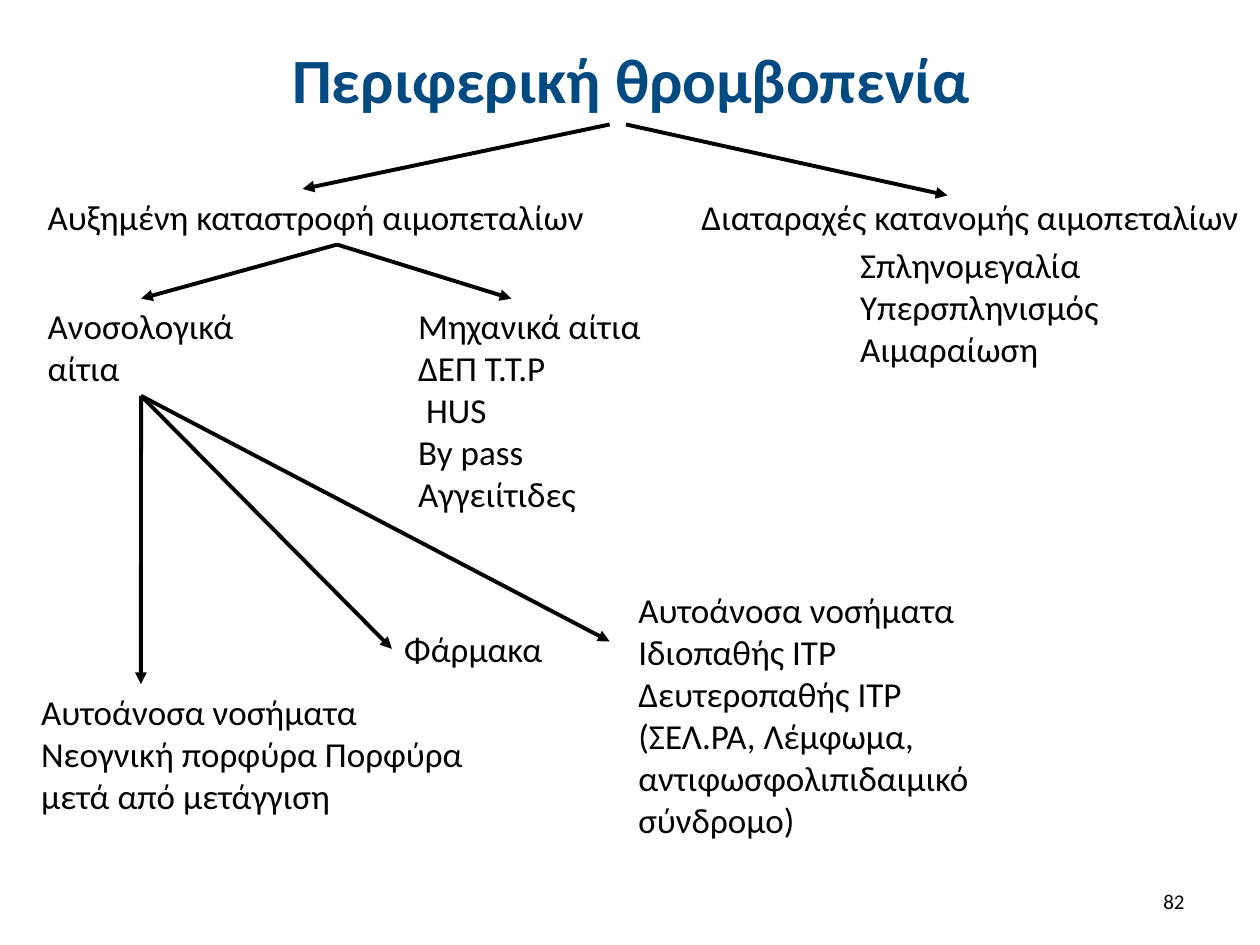
from lxml.etree import SubElement
from pptx import Presentation
from pptx.dml.color import RGBColor
from pptx.enum.shapes import MSO_CONNECTOR as Link
from pptx.enum.text import MSO_ANCHOR as Anchor, PP_ALIGN as Align
from pptx.oxml.ns import qn
from pptx.util import Cm, Pt

BLUE = RGBColor(0x00, 0x4A, 0x82)
BLACK = RGBColor(0, 0, 0)
FONT = "Calibri"
BOTTOM, LEFT, TOP = 2, 1, 0


def style(frame, size, color=BLACK, bold=False, align=Align.LEFT):
    for para in frame.paragraphs:
        para.alignment = align
        for run in para.runs:
            font = run.font
            font.name, font.size, font.bold = FONT, Pt(size), bold
            font.color.rgb = color


def label(slide, x, y, w, h, *lines, wrap=True):
    box = slide.shapes.add_textbox(Cm(x), Cm(y), Cm(w), Cm(h))
    frame = box.text_frame
    frame.word_wrap = wrap
    frame.text = "\n".join(lines)
    style(frame, 20)
    return box


def arrow(slide, start, end):
    """Join two ends, each an (x, y) point in cm or a (shape, site) pair."""
    line = slide.shapes.add_connector(Link.STRAIGHT, 0, 0, 0, 0)
    if isinstance(start[1], int):
        line.begin_connect(*start)
    else:
        line.begin_x, line.begin_y = map(Cm, start)
    if isinstance(end[1], int):
        line.end_connect(*end)
    else:
        line.end_x, line.end_y = map(Cm, end)
    line.line.color.rgb = BLACK
    line.line.width = Pt(2.25)
    SubElement(line.line._get_or_add_ln(), qn("a:tailEnd"), type="triangle")
    SubElement(line._element.spPr, qn("a:effectLst"))


def heading(slide, x, y, w, h):
    title = slide.shapes.title
    title.left, title.top, title.width, title.height = map(Cm, (x, y, w, h))
    frame = title.text_frame
    frame.text = "Περιφερική θρομβοπενία"
    frame.vertical_anchor = Anchor.MIDDLE
    style(frame, 36, BLUE, True, Align.CENTER)


def destruction(slide, x, y, w):
    """Place the left branch and return the immune causes box."""
    head = label(slide, x, y, w, 1.12, "Αυξημένη καταστροφή αιμοπεταλίων")
    low = y + 2.21
    immune = label(slide, x, low, 4.27, 1.96, "Ανοσολογικά αίτια")
    causes = label(slide, x + 7.47, low, 6.15, 4.52, "Μηχανικά αίτια",
                   "ΔΕΠ Τ.Τ.Ρ", "HUS", "By pass", "Αγγειίτιδες")
    # HUS is set in slightly under the line above
    hus = causes.text_frame.paragraphs[2]
    hus._p.get_or_add_pPr().set("marL", str(Cm(0.16)))
    arrow(slide, (head, BOTTOM), (immune, TOP))
    arrow(slide, (head, BOTTOM), (x + 9.6, low))
    return immune


def distribution(slide, x, y, w):
    label(slide, x, y, w, 1.12, "Διαταραχές κατανομής αιμοπεταλίων")
    label(slide, x + 3.2, y + 0.97, 6.35, 2.82,
          "Σπληνομεγαλία", "Υπερσπληνισμός", "Αιμαραίωση")


def immunity(slide, x, y, source):
    """Place the three immune causes and their arrows from the source box."""
    label(slide, x, y + 2.06, 10.01, 2.82, "Αυτοάνοσα νοσήματα",
          "Νεογνική πορφύρα Πορφύρα μετά από μετάγγιση")
    drugs = label(slide, x + 7.32, y + 0.79, 3.33, 1.12, "Φάρμακα", wrap=False)
    label(slide, x + 12.04, y, 10.29, 5.38, "Αυτοάνοσα νοσήματα",
          "Ιδιοπαθής ΙΤΡ", "Δευτεροπαθής ΙΤΡ",
          "(ΣΕΛ.ΡΑ, Λέμφωμα, αντιφωσφολιπιδαιμικό σύνδρομο)")
    for end in ((x + 2.26, y + 2.06), (drugs, LEFT), (x + 11.71, y + 1.2)):
        arrow(slide, (source, BOTTOM), end)


def footer(slide, x, y, w, h):
    frame = label(slide, x, y, w, h, "82").text_frame
    frame.vertical_anchor = Anchor.MIDDLE
    style(frame, 12, align=Align.RIGHT)


def main():
    deck = Presentation()
    deck.slide_width, deck.slide_height = Cm(25.4), Cm(19.05)
    slide = deck.slides.add_slide(deck.slide_layouts[5])

    heading(slide, 1.3, 0.33, 22.86, 2.51)
    immune = destruction(slide, 0.71, 3.81, 12.17)
    distribution(slide, 13.89, 3.81, 12.62)
    immunity(slide, 0.58, 11.73, immune)
    footer(slide, 18.21, 17.65, 5.92, 1.02)

    # Arrows from the title to the two branches
    arrow(slide, (12.29, 2.51), (6.1, 3.81))
    arrow(slide, (12.62, 2.51), (19.1, 3.94))
    deck.save("out.pptx")


if __name__ == "__main__":
    main()
